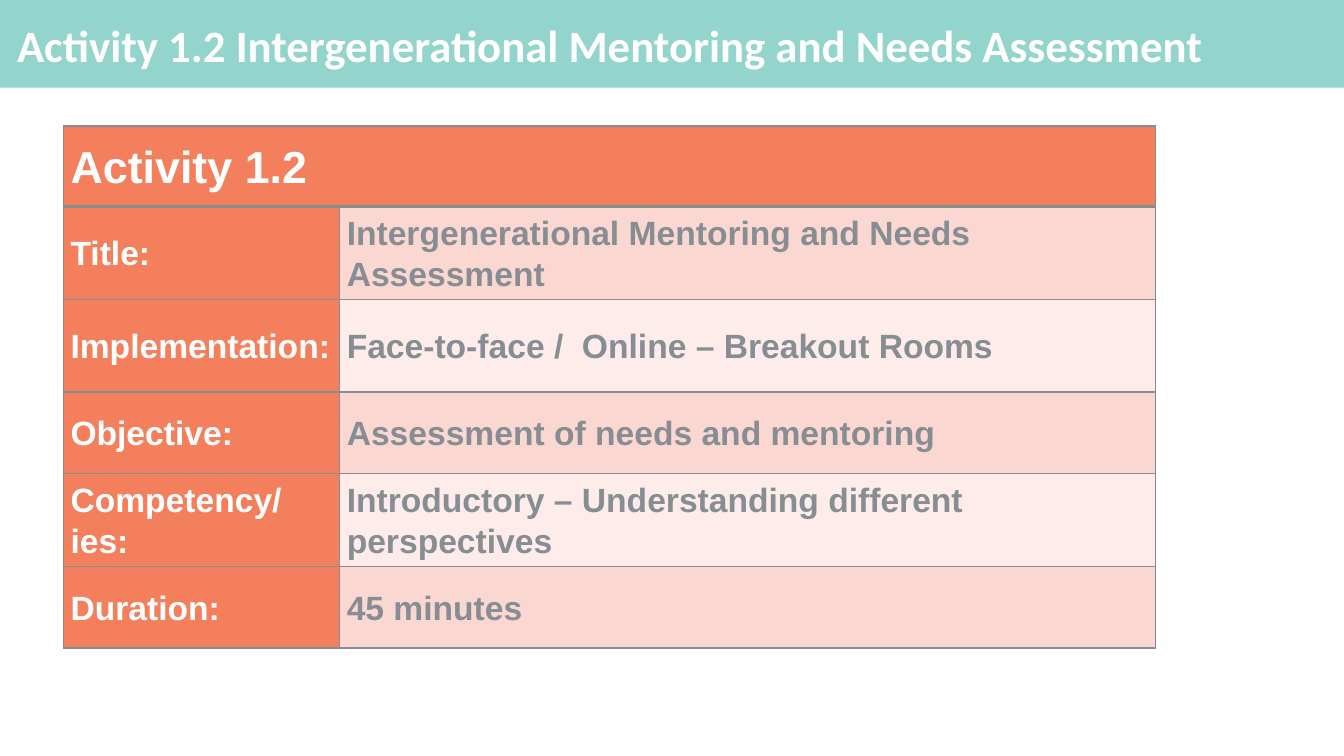
from lxml import etree
from pptx import Presentation
from pptx.dml.color import RGBColor
from pptx.enum.shapes import MSO_SHAPE
from pptx.enum.text import MSO_ANCHOR, MSO_AUTO_SIZE, PP_ALIGN
from pptx.oxml.ns import qn
from pptx.util import Inches, Pt

RECTANGLE = MSO_SHAPE.RECTANGLE
MIDDLE = MSO_ANCHOR.MIDDLE
NO_AUTOFIT = MSO_AUTO_SIZE.NONE
LEFT = PP_ALIGN.LEFT
TITLE_ONLY = 5

COLORS = {
    "teal": "93D4CC",
    "orange": "F47F5D",
    "pink": "FBD7D1",
    "pale": "FDECE9",
    "gray": "868E93",
    "white": "FFFFFF",
}
HEADING = "Activity 1.2 Intergenerational Mentoring and Needs Assessment"
ACTIVITY = "Activity 1.2"
DETAILS = [
    ("Title:", "Intergenerational Mentoring and Needs Assessment"),
    ("Implementation:", "Face-to-face /  Online – Breakout Rooms"),
    ("Objective:", "Assessment of needs and mentoring"),
    ("Competency/ies:", "Introductory – Understanding different perspectives"),
    ("Duration:", "45 minutes"),
]
COLUMN_WIDTHS = [2.74, 8.09]
ROW_HEIGHTS = [0.8, 0.92, 0.92, 0.81, 0.92, 0.81]
THIN, THICK = 1, 3


def rgb(color):
    return RGBColor.from_string(COLORS[color])


def write(frame, text, size, font, color, spacing):
    frame.text = text
    paragraph = frame.paragraphs[0]
    paragraph.alignment = LEFT
    paragraph.line_spacing = spacing
    lettering = paragraph.runs[0].font
    for attribute, value in {"size": Pt(size), "name": font, "bold": True}.items():
        setattr(lettering, attribute, value)
    lettering.color.rgb = rgb(color)


def set_borders(cell, widths):
    properties = cell._tc.get_or_add_tcPr()
    for position, (side, width) in enumerate(widths.items()):
        line = etree.Element(qn(f"a:ln{side}"), w=str(Pt(width)))
        fill = etree.SubElement(line, qn("a:solidFill"))
        etree.SubElement(fill, qn("a:srgbClr"), val=COLORS["gray"])
        properties.insert(position, line)


def style_cell(cell, fill, top=THIN, bottom=THIN):
    margins = {"margin_left": 0.07, "margin_right": 0.07,
               "margin_top": 0, "margin_bottom": 0}
    for attribute, inches in margins.items():
        setattr(cell, attribute, Inches(inches))
    cell.vertical_anchor = MIDDLE
    cell.fill.solid()
    cell.fill.fore_color.rgb = rgb(fill)
    set_borders(cell, {"L": THIN, "R": THIN, "T": top, "B": bottom})


def add_heading(slide, slide_width):
    # Teal band behind the title
    band = slide.shapes.add_shape(RECTANGLE, 0, 0, slide_width, Inches(0.87))
    band.shadow.inherit = False
    band.fill.solid()
    band.fill.fore_color.rgb = rgb("teal")
    band.line.fill.background()

    title = slide.shapes.title
    title.element.addprevious(band.element)
    box = {"left": 0.11, "top": 0.09, "width": 13.06, "height": 0.78}
    for attribute, inches in box.items():
        setattr(title, attribute, Inches(inches))
    frame = title.text_frame
    for side in ("left", "top", "right", "bottom"):
        setattr(frame, f"margin_{side}", Inches(0.06))
    frame.word_wrap = True
    frame.auto_size = NO_AUTOFIT
    frame.vertical_anchor = MIDDLE
    write(frame, HEADING, 32, "Calibri", "white", 0.9)


def add_activity_table(slide):
    table = slide.shapes.add_table(
        len(ROW_HEIGHTS), len(COLUMN_WIDTHS), Inches(0.63), Inches(1.25),
        Inches(sum(COLUMN_WIDTHS)), Inches(sum(ROW_HEIGHTS))).table
    for column, width in zip(table.columns, COLUMN_WIDTHS):
        column.width = Inches(width)
    for row, height in zip(table.rows, ROW_HEIGHTS):
        row.height = Inches(height)

    # Header across both columns
    header = table.cell(0, 0)
    header.merge(table.cell(0, 1))
    for cell in table.rows[0].cells:
        style_cell(cell, "orange", bottom=THICK)
    write(header.text_frame, ACTIVITY, 32, "Arial", "white", 1.07)

    # Labels and their details
    for index, (label, detail) in enumerate(DETAILS, start=1):
        shade = "pink" if index % 2 else "pale"
        top = THICK if index == 1 else THIN
        contents = [(label, "orange", "white"), (detail, shade, "gray")]
        for cell, (text, fill, color) in zip(table.rows[index].cells, contents):
            style_cell(cell, fill, top=top)
            write(cell.text_frame, text, 24, "Arial", color, 1.07)


def main():
    presentation = Presentation()
    presentation.slide_width = Inches(13.33)
    presentation.slide_height = Inches(7.5)
    slide = presentation.slides.add_slide(presentation.slide_layouts[TITLE_ONLY])
    add_heading(slide, presentation.slide_width)
    add_activity_table(slide)
    presentation.save("out.pptx")


if __name__ == "__main__":
    main()
